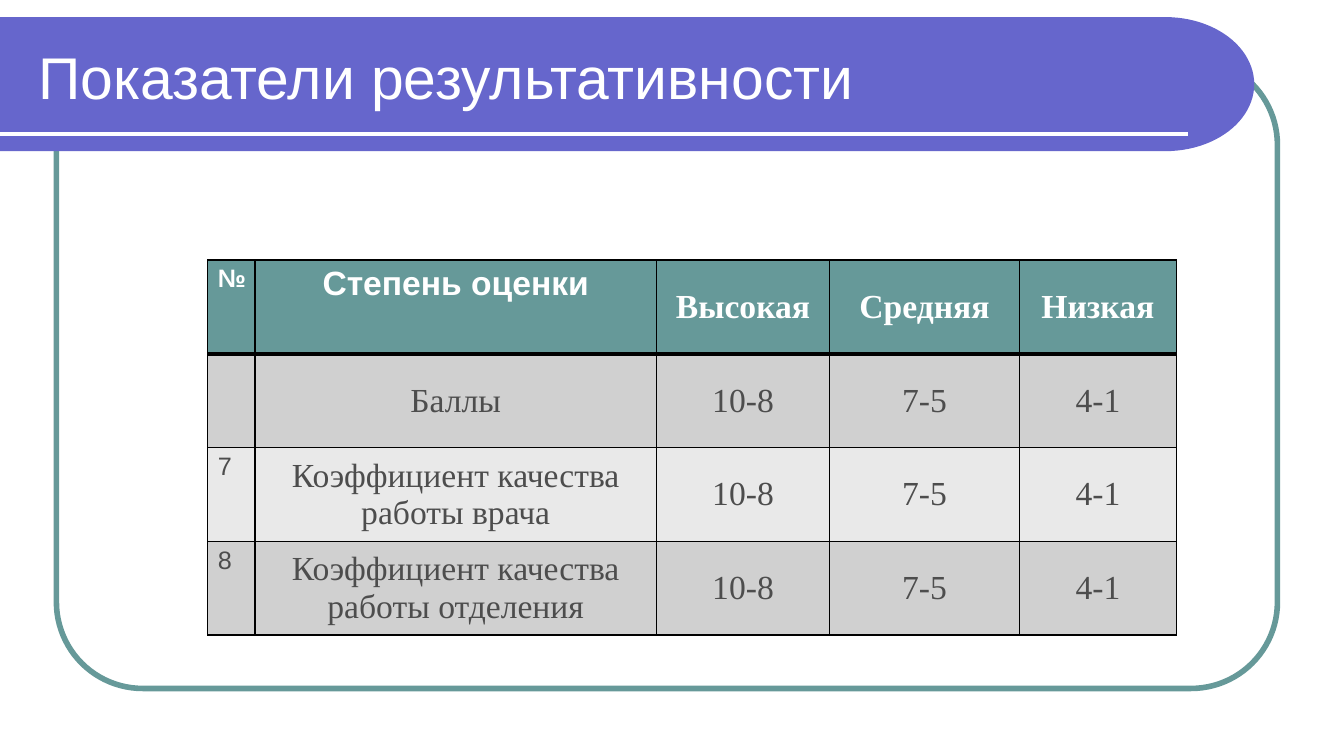
from math import cos, pi, sin

from lxml.etree import SubElement
from pptx import Presentation
from pptx.dml.color import RGBColor
from pptx.enum.shapes import MSO_CONNECTOR, MSO_SHAPE
from pptx.enum.text import MSO_ANCHOR, MSO_AUTO_SIZE, PP_ALIGN
from pptx.oxml.ns import qn
from pptx.util import Inches, Pt

COLORS = {
    "teal": "669999", "violet": "6666CC", "white": "FFFFFF", "black": "000000",
    "text": "4D4D4D", "band_dark": "D0D0D0", "band_light": "E9E9E9",
}
SANS, SERIF = "Arial", "Times New Roman"

COL_WIDTHS = [0.47, 3.98, 1.72, 1.88, 1.56]
ROW_HEIGHT = 0.93
HEADER = ["№", "Степень оценки", "Высокая", "Средняя", "Низкая"]
SCORES = ["10-8", "7-5", "4-1"]
ROWS = [
    HEADER,
    ["", "Баллы", *SCORES],
    ["7", "Коэффициент качества работы врача", *SCORES],
    ["8", "Коэффициент качества работы отделения", *SCORES],
]


def rgb(name):
    return RGBColor.from_string(COLORS[name])


def add_run(p, text, size, font, color, bold=False):
    r = p.add_run()
    r.text = text
    r.font.size = Pt(size)
    r.font.name = font
    r.font.bold = bold
    r.font.color.rgb = rgb(color)


def add_frame(s, x, y, w, h):
    """Rounded outline around the content."""
    sp = s.shapes.add_shape(MSO_SHAPE.ROUNDED_RECTANGLE,
                            Inches(x), Inches(y), Inches(w), Inches(h))
    sp.adjustments[0] = 0.137
    sp.shadow.inherit = False
    sp.fill.background()
    sp.line.color.rgb = rgb("teal")
    sp.line.width = Pt(4)


def add_banner(s, x, y, w, h):
    """Title band with an elliptical right end, a rule and the title."""
    # Band
    rx, ry, steps = 0.88, h / 2, 48
    angles = [-pi / 2 + pi * i / steps for i in range(steps + 1)]
    arc = [(Inches(x + w - rx + rx * cos(a)), Inches(y + ry + ry * sin(a)))
           for a in angles]
    builder = s.shapes.build_freeform(Inches(x), Inches(y))
    builder.add_line_segments([*arc, (Inches(x), Inches(y + h))], close=True)
    sp = builder.convert_to_shape()
    sp.shadow.inherit = False
    sp.fill.solid()
    sp.fill.fore_color.rgb = rgb("violet")
    sp.line.fill.background()

    # Rule
    rule_y = Inches(y + 1.16)
    rule = s.shapes.add_connector(MSO_CONNECTOR.STRAIGHT, Inches(x), rule_y,
                                  Inches(x + 11.78), rule_y)
    rule.line.color.rgb = rgb("white")
    rule.line.width = Pt(3)
    SubElement(rule._element.spPr, qn("a:effectLst"))

    # Title, brought in front of the band
    title = s.shapes.title
    title.left, title.top = Inches(x + 0.28), Inches(y + 0.08)
    title.width, title.height = Inches(11.69), Inches(1)
    s.shapes._spTree.append(title._element)
    tf = title.text_frame
    tf.word_wrap = True
    tf.auto_size = MSO_AUTO_SIZE.NONE
    tf.vertical_anchor = MSO_ANCHOR.MIDDLE
    p = tf.paragraphs[0]
    p.alignment = PP_ALIGN.LEFT
    add_run(p, "Показатели результативности", 42, SANS, "white")


def set_borders(cell, top, bottom):
    tcPr = cell._tc.get_or_add_tcPr()
    for side, width in (("L", 1), ("R", 1), ("T", top), ("B", bottom)):
        ln = SubElement(tcPr, qn(f"a:ln{side}"), w=str(Pt(width)))
        fill = SubElement(ln, qn("a:solidFill"))
        SubElement(fill, qn("a:srgbClr"), val=COLORS["black"])


def fill_cell(cell, text, row, col):
    head = row == 0
    set_borders(cell, top=3 if row == 1 else 1, bottom=3 if head else 1)
    cell.fill.solid()
    band = "band_dark" if row % 2 else "band_light"
    if row == len(ROWS) - 1:
        band = "band_dark"
    cell.fill.fore_color.rgb = rgb("teal" if head else band)

    # Number column and the first two headings sit at the top in sans
    sans = col == 0 or (head and col == 1)
    if not sans:
        cell.vertical_anchor = MSO_ANCHOR.MIDDLE
        cell.margin_left = cell.margin_right = Inches(0.07)
        cell.margin_top = cell.margin_bottom = 0
    if text:
        p = cell.text_frame.paragraphs[0]
        p.alignment = PP_ALIGN.CENTER if head or col else PP_ALIGN.LEFT
        add_run(p, text, 24 if col else 18, SANS if sans else SERIF,
                "white" if head else "text", bold=head)


def add_score_table(s, x, y):
    """Grid of grades and points."""
    shape = s.shapes.add_table(
        len(ROWS), len(COL_WIDTHS), Inches(x), Inches(y),
        Inches(sum(COL_WIDTHS)), Inches(ROW_HEIGHT * len(ROWS)))
    table = shape.table
    for column, width in zip(table.columns, COL_WIDTHS):
        column.width = Inches(width)
    for i, row in enumerate(ROWS):
        table.rows[i].height = Inches(ROW_HEIGHT)
        for j, text in enumerate(row):
            fill_cell(table.cell(i, j), text, i, j)


def main():
    prs = Presentation()
    prs.slide_width, prs.slide_height = Inches(13.33), Inches(7.5)
    s = prs.slides.add_slide(prs.slide_layouts[5])
    add_frame(s, 0.56, 0.58, 12.11, 6.25)
    add_banner(s, 0, 0.17, 12.44, 1.33)
    add_score_table(s, 2.06, 2.58)
    prs.save("out.pptx")


if __name__ == "__main__":
    main()
